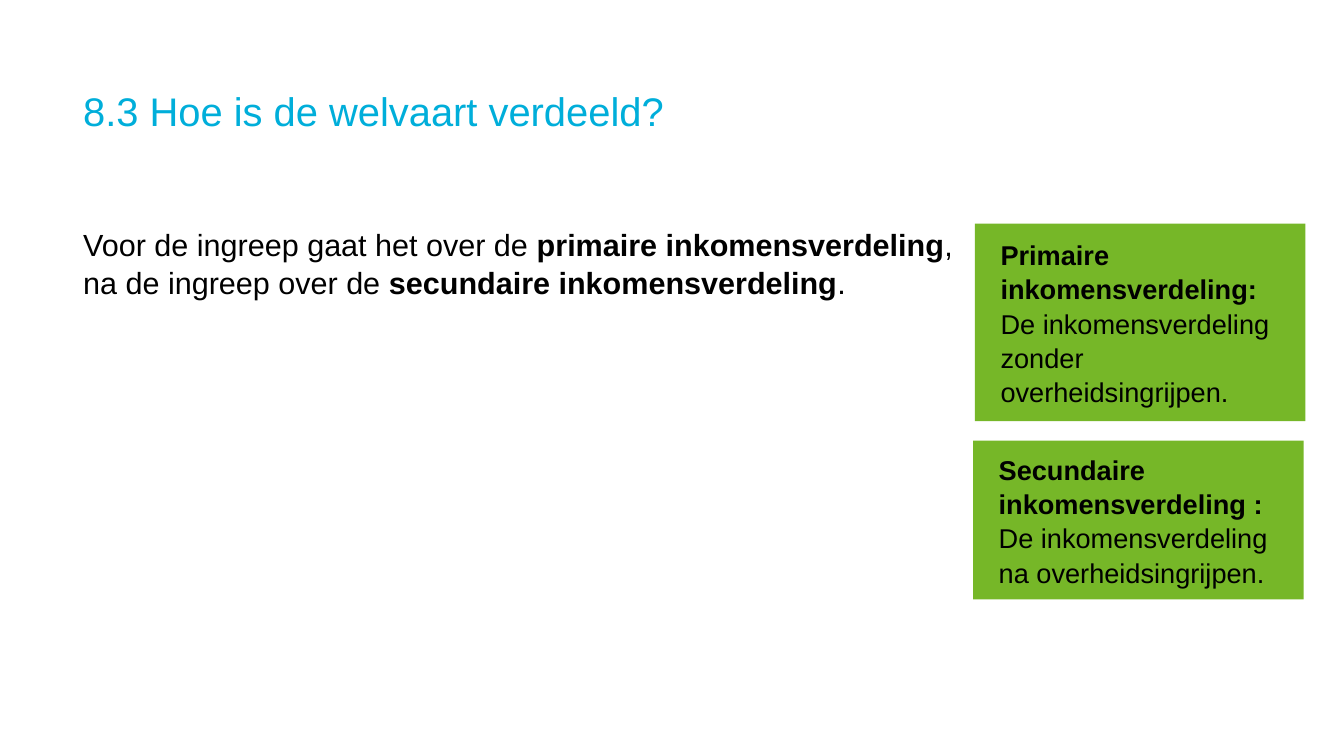
from dataclasses import dataclass

from pptx import Presentation
from pptx.dml.color import RGBColor
from pptx.enum.shapes import MSO_SHAPE
from pptx.enum.text import MSO_ANCHOR, PP_ALIGN
from pptx.util import Inches, Pt


@dataclass(frozen=True)
class Theme:
    font: str = "Arial"
    ink: str = "000000"
    title: str = "00AEDA"
    card: str = "76B728"
    title_size: int = 47
    body_size: int = 36
    card_size: int = 32
    line_spacing: float = 1.05


THEME = Theme()
WIDTH, HEIGHT = 21.99, 12.37
MARGIN = 1.36
CONTENT_TOP = 3.66
CARD_WIDTH = 5.41
CARD_PADDING = 0.42


def write(shape, paragraphs, size, color=THEME.ink, inset=0,
          anchor=MSO_ANCHOR.TOP, spacing=THEME.line_spacing):
    """Fill a shape with paragraphs, each a list of (text, bold) spans."""
    frame = shape.text_frame
    frame.word_wrap = True
    frame.vertical_anchor = anchor
    frame.margin_left = frame.margin_right = Inches(inset)
    frame.margin_top = frame.margin_bottom = Inches(inset)
    for index, spans in enumerate(paragraphs):
        para = frame.paragraphs[0] if index == 0 else frame.add_paragraph()
        para.alignment = PP_ALIGN.LEFT
        para.line_spacing = spacing
        for text, bold in spans:
            span = para.add_run()
            span.text = text
            span.font.name = THEME.font
            span.font.size = Pt(size)
            span.font.bold = bold
            span.font.color.rgb = RGBColor.from_string(color)


def add_title(page, box, text):
    shape = page.shapes.add_textbox(*map(Inches, box))
    write(shape, [[(text, False)]], THEME.title_size, color=THEME.title,
          anchor=MSO_ANCHOR.MIDDLE, spacing=1.0)


def add_body(page, box, spans):
    shape = page.shapes.add_textbox(*map(Inches, box))
    write(shape, [spans], THEME.body_size)


def add_definition(page, box, term, meaning):
    card = page.shapes.add_shape(MSO_SHAPE.RECTANGLE, *map(Inches, box))
    card.shadow.inherit = False
    card.fill.solid()
    card.fill.fore_color.rgb = RGBColor.from_string(THEME.card)
    card.line.fill.background()
    write(card, [[(term, True)], [(meaning, False)]], THEME.card_size,
          inset=CARD_PADDING, anchor=MSO_ANCHOR.MIDDLE)


def main():
    deck = Presentation()
    deck.slide_width, deck.slide_height = Inches(WIDTH), Inches(HEIGHT)
    page = deck.slides.add_slide(deck.slide_layouts[6])

    add_body(page, (MARGIN, CONTENT_TOP, 14.35, 5.12), [
        ("Voor de ingreep gaat het over de ", False),
        ("primaire inkomensverdeling", True),
        (", na de ingreep over de ", False),
        ("secundaire inkomensverdeling", True),
        (".", False),
    ])
    add_title(page, (MARGIN, MARGIN, WIDTH - 2 * MARGIN, 0.91),
              "8.3 Hoe is de welvaart verdeeld?")
    add_definition(page, (15.95, CONTENT_TOP, CARD_WIDTH, 3.23),
                   "Primaire inkomensverdeling:",
                   "De inkomensverdeling zonder overheidsingrijpen.")
    add_definition(page, (15.92, 7.21, CARD_WIDTH, 2.6),
                   "Secundaire inkomensverdeling :",
                   "De inkomensverdeling na overheidsingrijpen.")
    deck.save("out.pptx")


if __name__ == "__main__":
    main()
